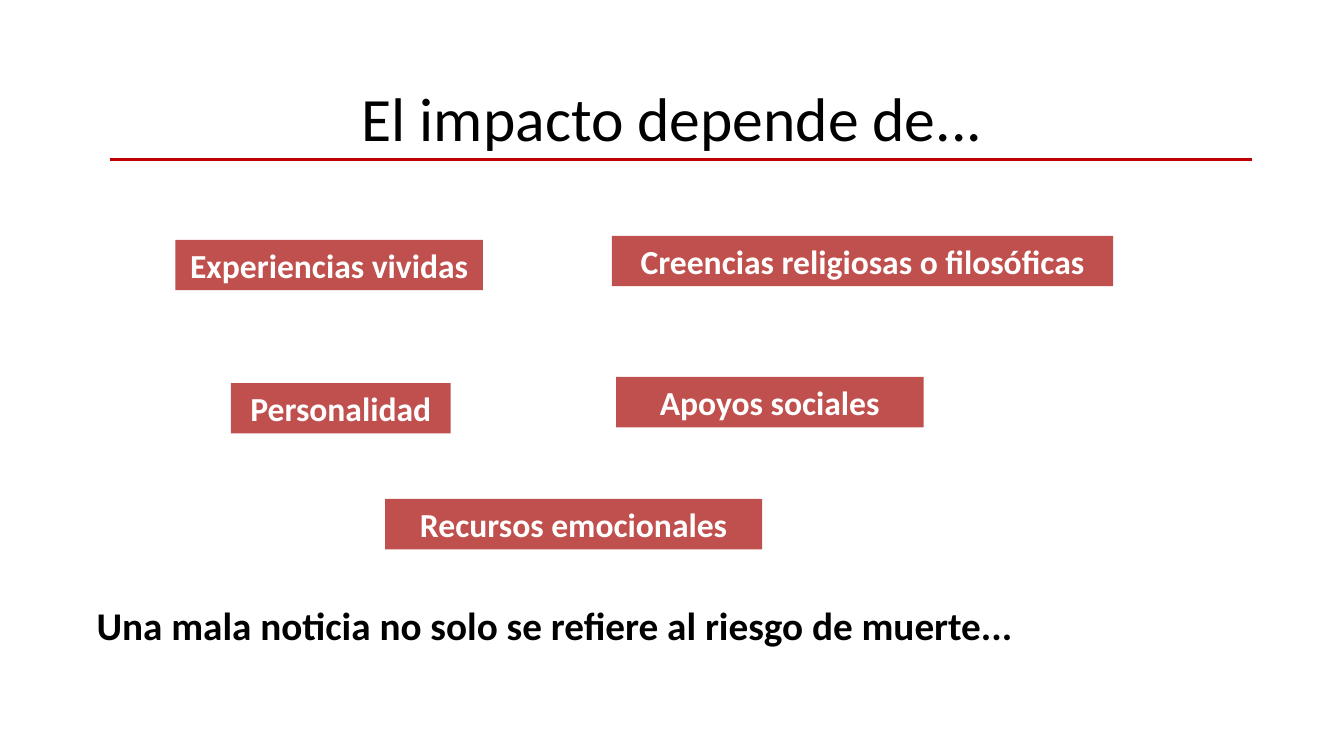
from dataclasses import dataclass

import pptx
import pptx.dml.color
import pptx.enum.shapes
import pptx.enum.text
import pptx.oxml.ns
import pptx.util
from lxml import etree

EMU_PER_PX = 9144  # 100 px to the inch
ALIGN = pptx.enum.text.PP_ALIGN
ANCHOR = pptx.enum.text.MSO_ANCHOR


@dataclass(frozen=True)
class Theme:
    font: str = "Calibri"
    ink: str = "000000"
    factor_fill: str = "C0504D"
    factor_text: str = "FFFFFF"
    rule: str = "C00000"
    title_size: int = 44
    factor_size: int = 24
    closing_size: int = 28
    rule_width: float = 2.25


THEME = Theme()
FACTOR_HEIGHT = 50

# Text, left, top, width
FACTORS = [
    ("Experiencias vividas", 174, 238, 305),
    ("Personalidad", 229, 380, 218),
    ("Creencias religiosas o filosóficas", 607, 234, 497),
    ("Apoyos sociales", 611, 374, 305),
    ("Recursos emocionales", 382, 495, 374),
]


def px(*lengths):
    return [pptx.util.Emu(length * EMU_PER_PX) for length in lengths]


def rgb(color):
    return pptx.dml.color.RGBColor.from_string(color)


def write_text(shape, text, size, color, bold=False, align=ALIGN.CENTER, anchor=ANCHOR.TOP):
    frame = shape.text_frame
    frame.word_wrap = True
    frame.vertical_anchor = anchor
    paragraph = frame.paragraphs[0]
    paragraph.alignment = align
    run = paragraph.add_run()
    run.text = text
    run.font.name = THEME.font
    run.font.size = pptx.util.Pt(size)
    run.font.bold = bold
    run.font.color.rgb = rgb(color)


def set_title(slide, text, left, top, width, height):
    title = slide.shapes.title
    title.left, title.top, title.width, title.height = px(left, top, width, height)
    write_text(title, text, THEME.title_size, THEME.ink, anchor=ANCHOR.MIDDLE)


def add_factor(slide, text, left, top, width):
    rectangle = pptx.enum.shapes.MSO_SHAPE.RECTANGLE
    shape = slide.shapes.add_shape(rectangle, *px(left, top, width, FACTOR_HEIGHT))
    shape.shadow.inherit = False
    shape.fill.solid()
    shape.fill.fore_color.rgb = rgb(THEME.factor_fill)
    shape.line.fill.background()
    write_text(shape, text, THEME.factor_size, THEME.factor_text, bold=True)


def add_closing(slide, text, left, top, width, height):
    shape = slide.shapes.add_textbox(*px(left, top, width, height))
    write_text(shape, text, THEME.closing_size, THEME.ink, bold=True, align=ALIGN.LEFT)


def add_rule(slide, left, right, top):
    straight = pptx.enum.shapes.MSO_CONNECTOR.STRAIGHT
    rule = slide.shapes.add_connector(straight, *px(left, top, right, top))
    rule.line.color.rgb = rgb(THEME.rule)
    rule.line.width = pptx.util.Pt(THEME.rule_width)
    # An empty effect list removes the shadow
    etree.SubElement(rule._element.spPr, pptx.oxml.ns.qn("a:effectLst"))


def main():
    presentation = pptx.Presentation()
    presentation.slide_width, presentation.slide_height = px(1333, 750)
    slide = presentation.slides.add_slide(presentation.slide_layouts[5])

    # Heading
    set_title(slide, "El impacto depende de...", 142, 44, 1050, 143)

    # Factors that shape the impact
    for factor in FACTORS:
        add_factor(slide, *factor)

    # Closing remark and line under the heading
    add_closing(slide, "Una mala noticia no solo se refiere al riesgo de muerte...",
                86, 592, 1025, 57)
    add_rule(slide, 109, 1242, 158)

    presentation.save("out.pptx")


if __name__ == "__main__":
    main()
